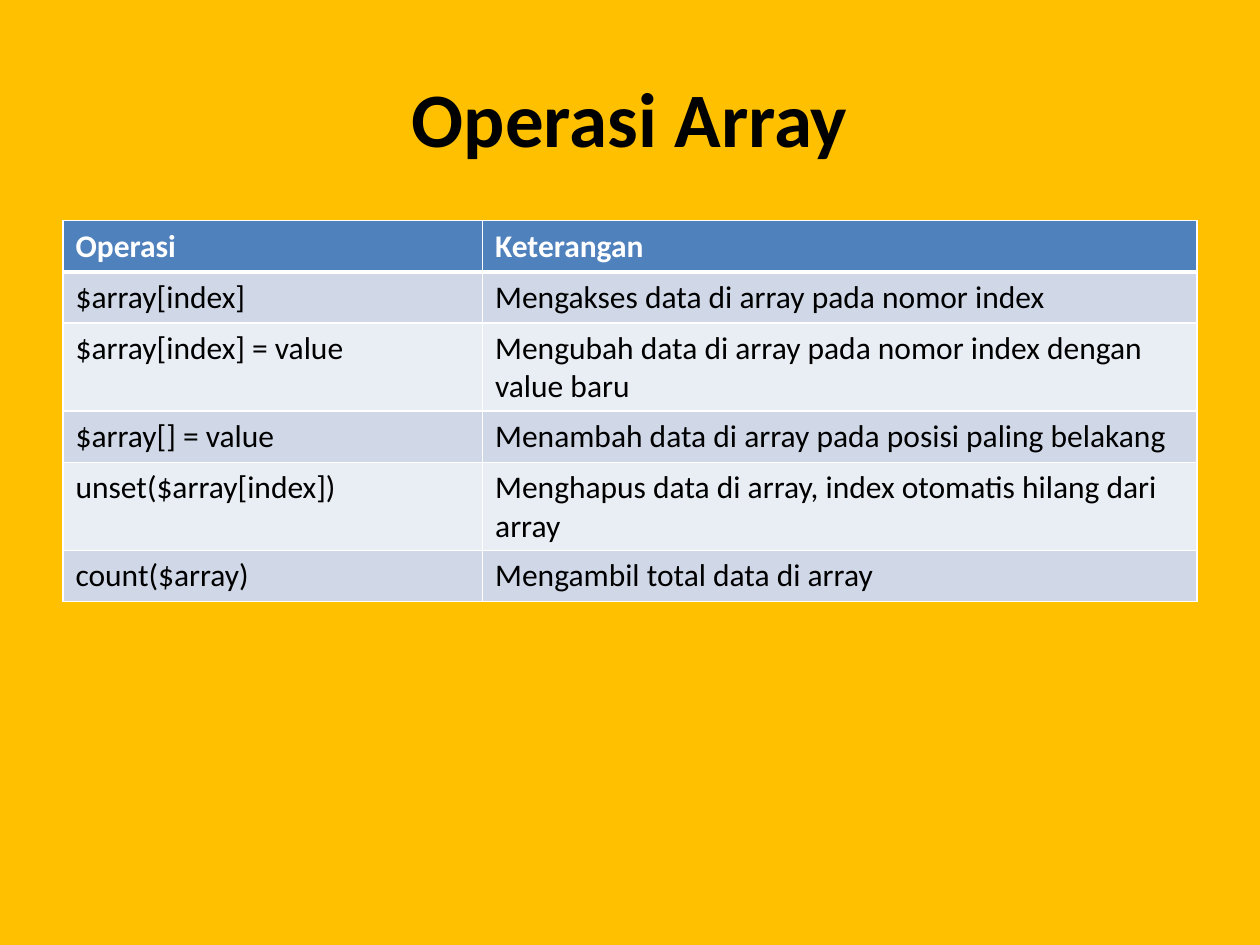
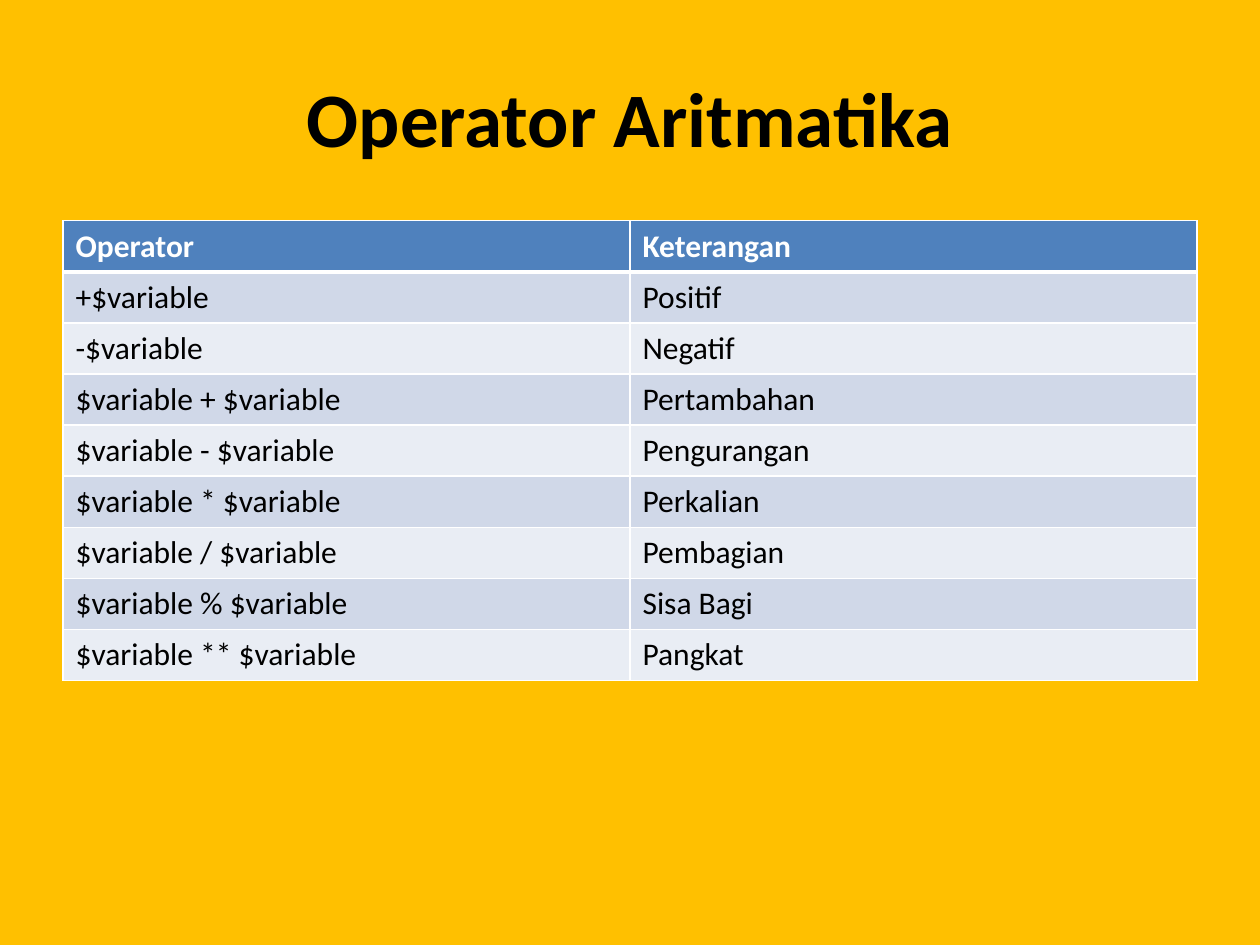
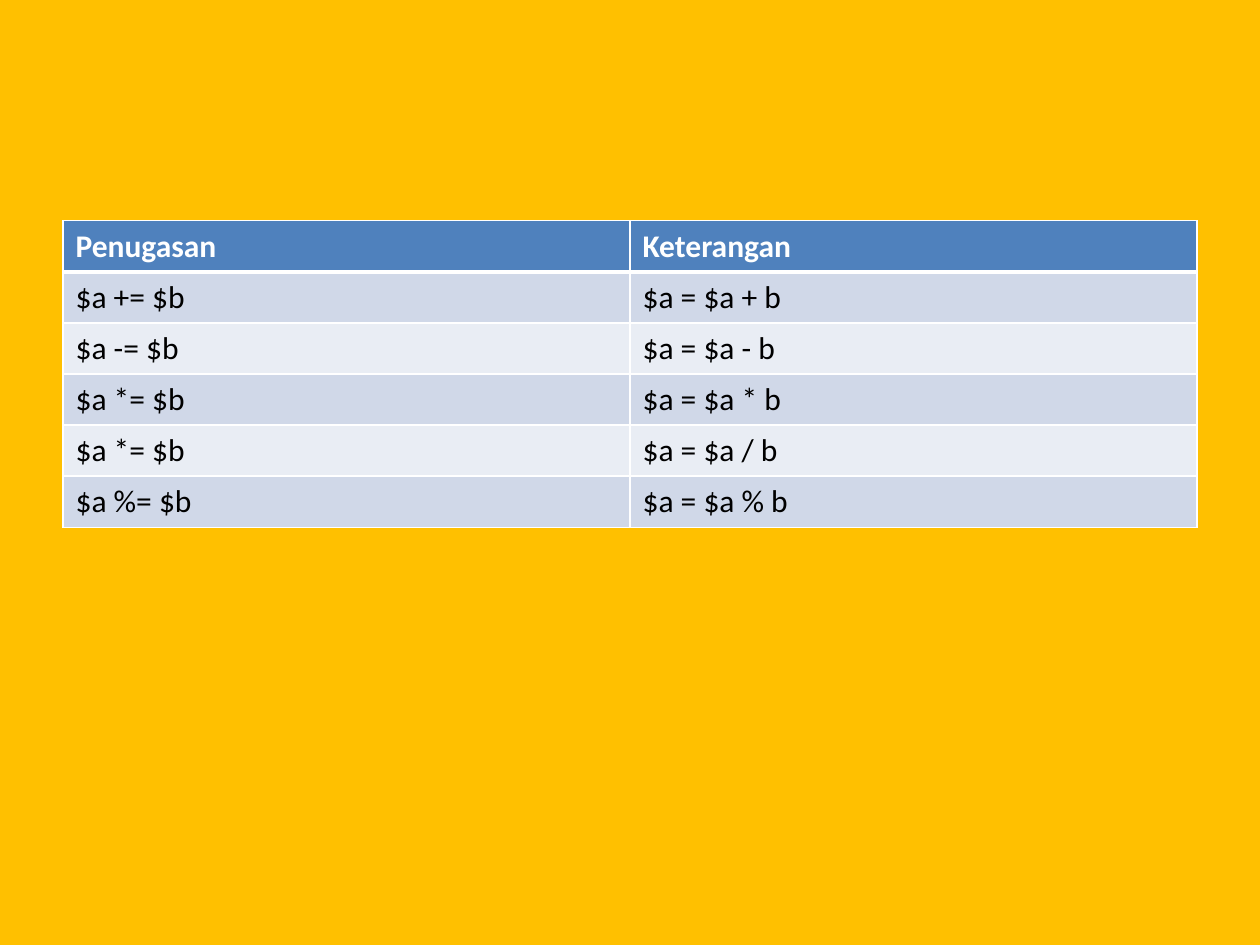
from lxml import etree
from pptx import Presentation
from pptx.dml.color import RGBColor
from pptx.enum.text import MSO_ANCHOR, PP_ALIGN
from pptx.oxml.ns import qn
from pptx.util import Cm, Pt

CENTER, LEFT = PP_ALIGN.CENTER, PP_ALIGN.LEFT
MIDDLE = MSO_ANCHOR.MIDDLE

# Shared look
AMBER = RGBColor(0xFF, 0xC0, 0x00)
BLUE = RGBColor(0x4F, 0x81, 0xBD)
BAND_DARK = RGBColor(0xD0, 0xD8, 0xE8)
BAND_LIGHT = RGBColor(0xE9, 0xED, 0xF4)
BLACK = RGBColor(0x00, 0x00, 0x00)
WHITE = RGBColor(0xFF, 0xFF, 0xFF)
FONT = "Calibri"
THIN, THICK = Pt(1), Pt(3)

# Shared layout: left, top, width, height
TITLE_BOX = (Cm(1.27), Cm(0.76), Cm(22.86), Cm(3.18))
TABLE_BOX = (Cm(1.27), Cm(4.45), Cm(22.86))
ROW_HEIGHT = Cm(1.03)

# Title, share of the first column, table rows with the header first
PAGES = [
    ("Operasi Array", 0.37, [
        ("Operasi", "Keterangan"),
        ("$array[index]", "Mengakses data di array pada nomor index"),
        ("$array[index] = value",
         "Mengubah data di array pada nomor index dengan value baru"),
        ("$array[] = value",
         "Menambah data di array pada posisi paling belakang"),
        ("unset($array[index])",
         "Menghapus data di array, index otomatis hilang dari array"),
        ("count($array)", "Mengambil total data di array"),
    ]),
    ("Operator Aritmatika", 0.5, [
        ("Operator", "Keterangan"),
        ("+$variable", "Positif"),
        ("-$variable", "Negatif"),
        ("$variable + $variable", "Pertambahan"),
        ("$variable - $variable", "Pengurangan"),
        ("$variable * $variable", "Perkalian"),
        ("$variable / $variable", "Pembagian"),
        ("$variable % $variable", "Sisa Bagi"),
        ("$variable ** $variable", "Pangkat"),
    ]),
    (None, 0.5, [
        ("Penugasan", "Keterangan"),
        ("$a += $b", "$a = $a + b"),
        ("$a -= $b", "$a = $a - b"),
        ("$a *= $b", "$a = $a * b"),
        ("$a *= $b", "$a = $a / b"),
        ("$a %= $b", "$a = $a % b"),
    ]),
]


def write_text(frame, text, size=18, color=BLACK, bold=False, align=LEFT):
    frame.word_wrap = True
    para = frame.paragraphs[0]
    para.alignment = align
    span = para.add_run()
    span.text = text
    span.font.name = FONT
    span.font.size = Pt(size)
    span.font.bold = bold
    span.font.color.rgb = color


def set_borders(cell, top, bottom):
    """Draw white cell edges; they must come before the fill in the XML."""
    properties = cell._tc.get_or_add_tcPr()
    edges = {"a:lnL": THIN, "a:lnR": THIN, "a:lnT": top, "a:lnB": bottom}
    for tag, width in edges.items():
        line = etree.SubElement(properties, qn(tag), w=str(width))
        fill = etree.SubElement(line, qn("a:solidFill"))
        etree.SubElement(fill, qn("a:srgbClr"), val=str(WHITE))


def add_title(page, box, text):
    frame = page.shapes.add_textbox(*box).text_frame
    write_text(frame, text, size=44, bold=True, align=CENTER)
    frame.vertical_anchor = MIDDLE


def add_banded_table(page, box, rows, first_share):
    left, top, width = box
    table = page.shapes.add_table(
        len(rows), 2, left, top, width, ROW_HEIGHT * len(rows)).table
    first_width = int(width * first_share)
    table.columns[0].width = first_width
    table.columns[1].width = width - first_width

    for row_number, texts in enumerate(rows):
        header = row_number == 0
        band = BAND_DARK if row_number % 2 else BAND_LIGHT
        for column_number, text in enumerate(texts):
            cell = table.cell(row_number, column_number)
            set_borders(cell, top=THICK if row_number == 1 else THIN,
                        bottom=THICK if header else THIN)
            cell.fill.solid()
            cell.fill.fore_color.rgb = BLUE if header else band
            write_text(cell.text_frame, text, bold=header,
                       color=WHITE if header else BLACK)


def add_page(deck, title, first_share, rows):
    page = deck.slides.add_slide(deck.slide_layouts[6])
    page.background.fill.solid()
    page.background.fill.fore_color.rgb = AMBER
    if title:
        add_title(page, TITLE_BOX, title)
    add_banded_table(page, TABLE_BOX, rows, first_share)


def main():
    deck = Presentation()
    deck.slide_width, deck.slide_height = Cm(25.4), Cm(19.05)
    for title, first_share, rows in PAGES:
        add_page(deck, title, first_share, rows)
    deck.save("out.pptx")


if __name__ == "__main__":
    main()
